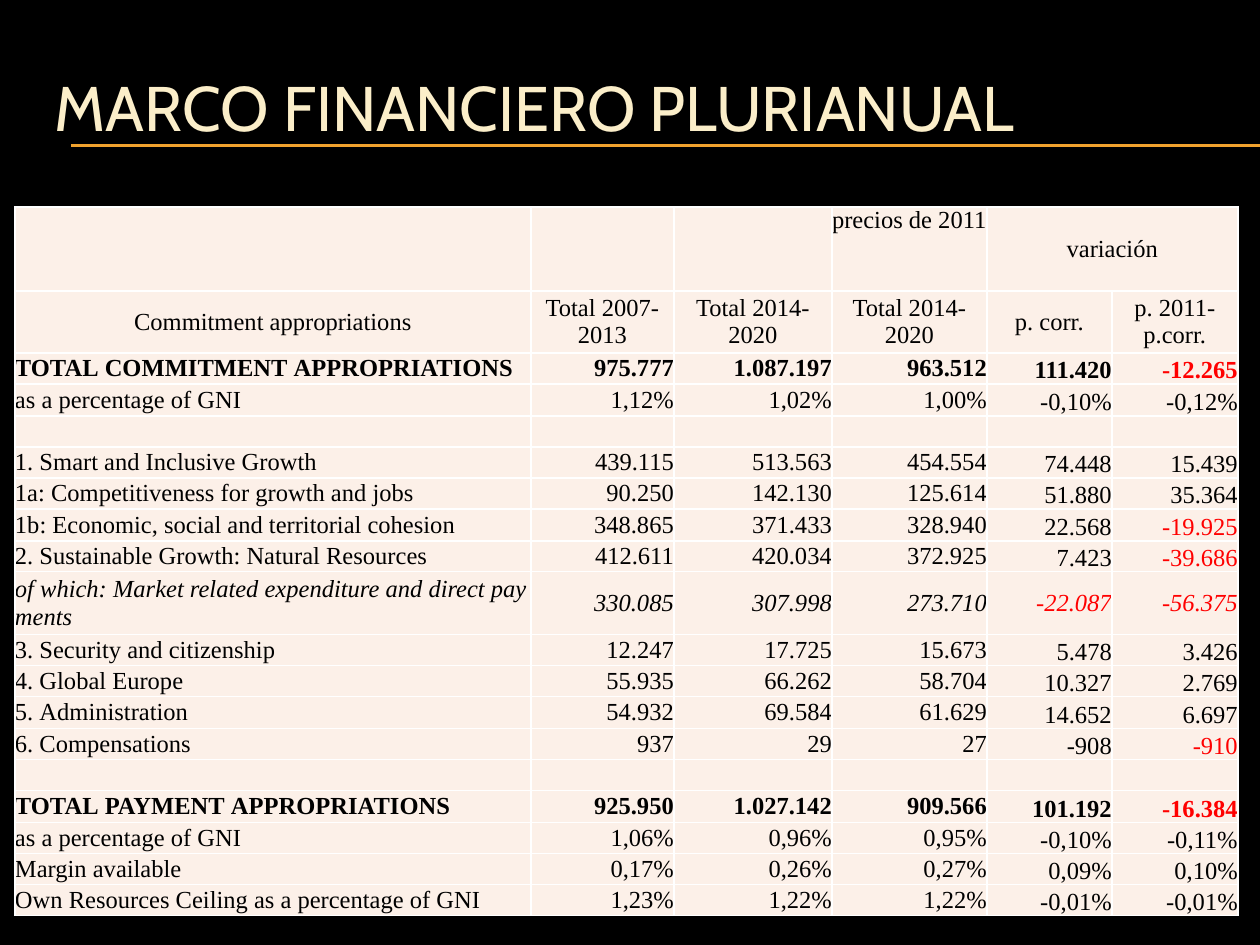
import pptx
import pptx.dml.color
import pptx.enum.shapes
import pptx.enum.text
import pptx.oxml.ns
import pptx.util
import lxml.etree

PX = 914400 // 126
ALIGN = pptx.enum.text.PP_ALIGN
ANCHOR = pptx.enum.text.MSO_ANCHOR

HEADERS = [
    ["", "", "", "precios de 2011", "variación", ""],
    ["Commitment appropriations", "Total 2007- 2013", "Total 2014-2020",
     "Total 2014-2020", "p. corr.", "p. 2011-p.corr."],
]
# Budget lines: label, then the five figures separated by spaces
BUDGET = [
    ("TOTAL COMMITMENT APPROPRIATIONS", "975.777 1.087.197 963.512 111.420 -12.265"),
    ("as a percentage of GNI", "1,12% 1,02% 1,00% -0,10% -0,12%"),
    ("", ""),
    ("1. Smart and Inclusive Growth", "439.115 513.563 454.554 74.448 15.439"),
    ("1a: Competitiveness for growth and jobs", "90.250 142.130 125.614 51.880 35.364"),
    ("1b: Economic, social and territorial cohesion",
     "348.865 371.433 328.940 22.568 -19.925"),
    ("2. Sustainable Growth: Natural Resources", "412.611 420.034 372.925 7.423 -39.686"),
    ("of which: Market related expenditure and direct payments",
     "330.085 307.998 273.710 -22.087 -56.375"),
    ("3. Security and citizenship", "12.247 17.725 15.673 5.478 3.426"),
    ("4. Global Europe", "55.935 66.262 58.704 10.327 2.769"),
    ("5. Administration", "54.932 69.584 61.629 14.652 6.697"),
    ("6. Compensations", "937 29 27 -908 -910"),
    ("", ""),
    ("TOTAL PAYMENT APPROPRIATIONS", "925.950 1.027.142 909.566 101.192 -16.384"),
    ("as a percentage of GNI", "1,06% 0,96% 0,95% -0,10% -0,11%"),
    ("Margin available", "0,17% 0,26% 0,27% 0,09% 0,10%"),
    ("Own Resources Ceiling as a percentage of GNI", "1,23% 1,22% 1,22% -0,01% -0,01%"),
]
RED_FIGURES = {"-12.265", "-19.925", "-39.686", "-22.087", "-56.375", "-910", "-16.384"}
COLUMN_WIDTHS = [516, 143, 158, 155, 125, 126]
HEADER_HEIGHTS = [84, 62]
ROW_HEIGHT = 31.3


def color(value):
    return pptx.dml.color.RGBColor.from_string(value)


class SlideBuilder:
    table_font = "Times New Roman"
    table_size = 14
    cell_fill = "FCF0E8"
    border = "FFFFFF"
    accent = "F0A22E"

    def __init__(self, slide):
        self.slide = slide

    def background(self, value):
        fill = self.slide.background.fill
        fill.solid()
        fill.fore_color.rgb = color(value)

    def title(self, text, left, top, width, height):
        box = self.slide.shapes.title
        box.left, box.top, box.width, box.height = (
            side * PX for side in (left, top, width, height))
        frame = box.text_frame
        frame.text = text
        frame.vertical_anchor = ANCHOR.MIDDLE
        para = frame.paragraphs[0]
        para.alignment = ALIGN.LEFT
        self.style(para.runs[0], "Cabin", 36, "FBEEC9")

    def style(self, span, name, size, value):
        span.font.name = name
        span.font.size = pptx.util.Pt(size)
        span.font.color.rgb = color(value)

    def rule(self, left, right, top):
        line = self.slide.shapes.add_connector(
            pptx.enum.shapes.MSO_CONNECTOR.STRAIGHT,
            left * PX, top * PX, right * PX, top * PX)
        line.line.color.rgb = color(self.accent)
        line.line.width = pptx.util.Pt(0.75)
        lxml.etree.SubElement(line._element.spPr, pptx.oxml.ns.qn("a:effectLst"))

    def table(self, left, top, widths, heights):
        frame = self.slide.shapes.add_table(
            len(heights), len(widths), left * PX, top * PX,
            sum(widths) * PX, sum(heights) * PX)
        table = frame.table
        for column, width in zip(table.columns, widths):
            column.width = width * PX
        for row, height in zip(table.rows, heights):
            row.height = height * PX
        return table

    def cell(self, cell, text, align, anchor, value="000000", bold=False, italic=False):
        cell.margin_left = cell.margin_right = cell.margin_top = cell.margin_bottom = 0
        cell.vertical_anchor = anchor
        cell.text_frame.text = text
        para = cell.text_frame.paragraphs[0]
        para.alignment = align
        for span in para.runs:
            self.style(span, self.table_font, self.table_size, value)
            span.font.bold, span.font.italic = bold, italic
        if not text:  # an empty cell keeps the height of the table's text
            end = lxml.etree.SubElement(para._p, pptx.oxml.ns.qn("a:endParaRPr"))
            end.set("sz", str(self.table_size * 100))
        self.cell_borders(cell)
        cell.fill.solid()
        cell.fill.fore_color.rgb = color(self.cell_fill)

    def cell_borders(self, cell):
        properties = cell._tc.get_or_add_tcPr()
        for side in ("a:lnL", "a:lnR", "a:lnT", "a:lnB"):
            line = lxml.etree.SubElement(
                properties, pptx.oxml.ns.qn(side), w=str(pptx.util.Pt(1)))
            fill = lxml.etree.SubElement(line, pptx.oxml.ns.qn("a:solidFill"))
            lxml.etree.SubElement(fill, pptx.oxml.ns.qn("a:srgbClr"), val=self.border)


def row_heights():
    # Rounded row edges keep the fractional row height from drifting
    edges, units = [0], 0
    for label, _ in BUDGET:
        units += 2 if label.startswith("of which") else 1
        edges.append(round(units * ROW_HEIGHT))
    return HEADER_HEIGHTS + [end - start for start, end in zip(edges, edges[1:])]


def fill_table(builder, table):
    # Header rows
    for row, texts in enumerate(HEADERS):
        for column, text in enumerate(texts):
            anchor = ANCHOR.TOP if text.startswith("precios") else ANCHOR.MIDDLE
            builder.cell(table.cell(row, column), text, ALIGN.CENTER, anchor)
    table.cell(0, 4).merge(table.cell(0, 5))

    # Budget rows: labels use no-break spaces, variations sit on the bottom edge
    for row, (label, figures) in enumerate(BUDGET, len(HEADERS)):
        bold = label.startswith("TOTAL")
        italic = label.startswith("of which")
        builder.cell(table.cell(row, 0), label.replace(" ", chr(160)),
                     ALIGN.LEFT, ANCHOR.MIDDLE, bold=bold, italic=italic)
        values = figures.split() or [""] * 5
        for column, figure in enumerate(values, 1):
            anchor = ANCHOR.BOTTOM if column > 3 and not italic else ANCHOR.MIDDLE
            value = "FF0000" if figure in RED_FIGURES else "000000"
            builder.cell(table.cell(row, column), figure, ALIGN.RIGHT, anchor,
                         value, bold, italic)


def main():
    deck = pptx.Presentation()
    deck.slide_width = 1260 * PX
    deck.slide_height = 945 * PX
    builder = SlideBuilder(deck.slides.add_slide(deck.slide_layouts[5]))
    builder.background("000000")

    # Title with its double rule
    for top in (145, 146):
        builder.rule(71, 1260, top)
    builder.title("MARCO FINANCIERO PLURIANUAL", 42, 48, 1197, 116)

    # Budget table
    fill_table(builder, builder.table(15, 207, COLUMN_WIDTHS, row_heights()))
    deck.save("out.pptx")


if __name__ == "__main__":
    main()
